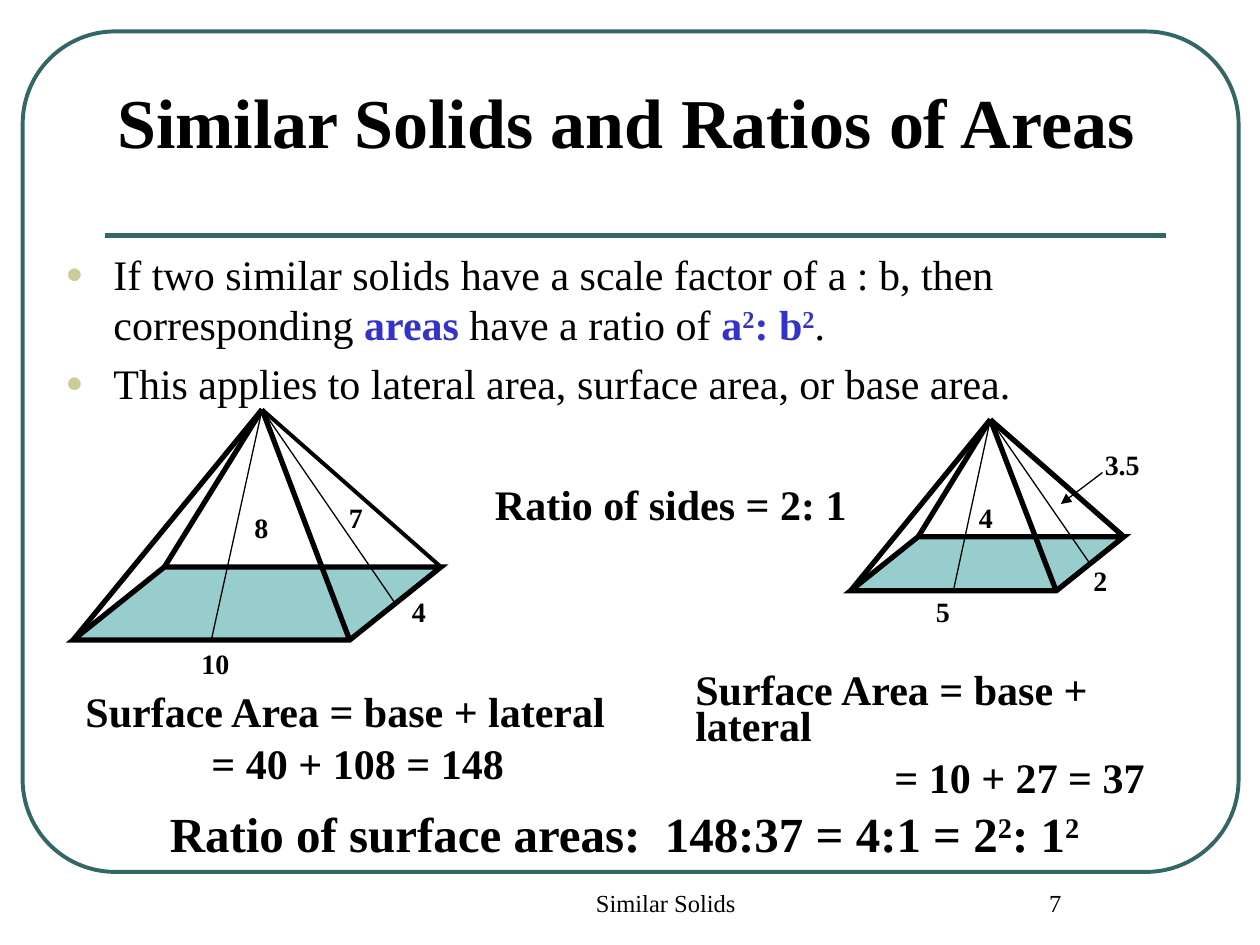
from dataclasses import dataclass

from lxml import etree
from pptx import Presentation
from pptx.dml.color import RGBColor
from pptx.enum import shapes, text
from pptx.oxml import ns
from pptx.util import Inches, Pt


@dataclass(frozen=True)
class Theme:
    font: str = "Times New Roman"
    ink: str = "000000"
    frame: str = "336666"
    accent: str = "3333CC"
    bullet: str = "CCCC99"
    base: str = "97CDCC"
    title: int = 40
    conclusion: int = 28
    body: int = 24
    label: int = 16
    footer: int = 14
    heavy: float = 3
    medium: float = 2.25
    thin: float = 0.75


THEME = Theme()


def rgb(color):
    return RGBColor.from_string(color)


def add_child(parent, tag, **attributes):
    return etree.SubElement(parent, ns.qn(f"a:{tag}"), attributes)


def style(paragraph, size, bold=False):
    font = paragraph.font
    font.name, font.size, font.bold = THEME.font, Pt(size), bold
    font.color.rgb = rgb(THEME.ink)
    paragraph.space_before = Pt(0)


def place(shape, box):
    shape.left, shape.top, shape.width, shape.height = map(Inches, box)


def add_runs(paragraph, parts):
    for wording, superscript, color in parts:
        run = paragraph.add_run()
        run.text = wording
        if color:
            run.font.bold = True
            run.font.color.rgb = rgb(color)
        if superscript:
            run.font._element.set("baseline", "30000")


def add_text(slide, box, lines, size, bold=True, align=text.PP_ALIGN.LEFT):
    textbox = slide.shapes.add_textbox(*map(Inches, box))
    frame = textbox.text_frame
    frame.word_wrap = True
    for index, line in enumerate(lines):
        paragraph = frame.paragraphs[0] if index == 0 else frame.add_paragraph()
        style(paragraph, size, bold)
        paragraph.alignment = align
        add_runs(paragraph, [(line, False, None)] if isinstance(line, str) else line)
    return frame.paragraphs


def add_line(slide, start, end, width, color=THEME.ink, arrow=False):
    line = slide.shapes.add_connector(
        shapes.MSO_CONNECTOR.STRAIGHT, *map(Inches, (*start, *end)))
    line.line.color.rgb = rgb(color)
    line.line.width = Pt(width)
    if arrow:
        add_child(line.line._get_or_add_ln(), "tailEnd", type="triangle")
    add_child(line._element.spPr, "effectLst")


def add_frame(slide, box):
    border = slide.shapes.add_shape(
        shapes.MSO_SHAPE.ROUNDED_RECTANGLE, *map(Inches, box))
    border.adjustments[0] = 0.11
    border.shadow.inherit = False
    border.fill.background()
    border.line.color.rgb = rgb(THEME.frame)
    border.line.width = Pt(THEME.medium)
    left, top, width, _ = box
    rule_y = top + 1.62
    add_line(slide, (left + 0.65, rule_y), (left + width - 0.58, rule_y),
             THEME.heavy, THEME.frame)


def fill_title(slide, box):
    title = slide.shapes.title
    place(title, box)
    frame = title.text_frame
    frame.text = "Similar Solids and Ratios of Areas"
    frame.auto_size = text.MSO_AUTO_SIZE.NONE
    frame.vertical_anchor = text.MSO_ANCHOR.BOTTOM
    style(frame.paragraphs[0], THEME.title, True)
    frame.paragraphs[0].alignment = text.PP_ALIGN.LEFT


def fill_rules(slide, box):
    body = slide.placeholders[1]
    place(body, box)
    frame = body.text_frame
    frame.auto_size = text.MSO_AUTO_SIZE.NONE
    accent = THEME.accent
    rules = [
        [("If two similar solids have a scale factor of a : b, then corresponding ",
          False, None),
         ("areas", False, accent), (" have a ratio of ", False, None),
         ("a", False, accent), ("2", True, accent), (": b", False, accent),
         ("2", True, accent), (".", False, None)],
        [("This applies to lateral area, surface area, or base area.", False, None)],
    ]
    for index, parts in enumerate(rules):
        paragraph = frame.paragraphs[0] if index == 0 else frame.add_paragraph()
        style(paragraph, THEME.body)
        paragraph.space_before = Pt(4.8 * index)
        add_runs(paragraph, parts)
        properties = paragraph._p.get_or_add_pPr()
        properties.set("marL", str(Inches(0.38)))
        properties.set("indent", str(Inches(-0.38)))
        add_child(add_child(properties, "buClr"), "srgbClr", val=THEME.bullet)
        add_child(properties, "buSzPct", val="70000")
        add_child(properties, "buChar", char="●")


def add_pyramid(slide, box, apex_dx, base_height, right_edge, labels):
    left, top, width, height = box
    right, bottom = left + width, top + height
    back_y = bottom - base_height
    skew = 1.25 * base_height
    base = slide.shapes.add_shape(
        shapes.MSO_SHAPE.PARALLELOGRAM,
        *map(Inches, (left, back_y, width, base_height)))
    base.adjustments[0] = 1.25
    base.shadow.inherit = False
    base.fill.solid()
    base.fill.fore_color.rgb = rgb(THEME.base)
    base.line.color.rgb = rgb(THEME.ink)
    base.line.width = Pt(THEME.heavy)
    add_child(base.line._get_or_add_ln(), "miter", lim="800000")

    apex = (left + apex_dx, top)
    front_right = right - skew
    edges = [
        ((left, bottom), THEME.heavy),
        ((left + skew, back_y), THEME.heavy),
        ((front_right, bottom), THEME.heavy),
        ((right, back_y), right_edge),
        (((left + front_right) / 2, bottom), THEME.thin),
        (((right + front_right) / 2, bottom - base_height / 2), THEME.thin),
    ]
    for end, weight in edges:
        add_line(slide, apex, end, weight)
    for wording, dx, dy, label_width in labels:
        add_text(slide, (left + dx, top + dy, label_width, 0.37),
                 [wording], THEME.label)


def add_surface_area(slide, box, calculation, indent):
    paragraphs = add_text(
        slide, box, ["Surface Area = base + lateral", calculation], THEME.body)
    for paragraph in paragraphs:
        paragraph.line_spacing = 0.7
    paragraphs[1].space_before = Pt(9.6)
    paragraphs[1]._p.get_or_add_pPr().set("marL", str(Inches(indent)))


def add_footer(slide, box):
    left, top, _, height = box
    for wording, dx, width in (("Similar Solids", 0.03, 3.17), ("7", 3.83, 1.75)):
        add_text(slide, (left + dx, top, width, height), [wording],
                 THEME.footer, False, text.PP_ALIGN.CENTER)


def main():
    deck = Presentation()
    deck.slide_width, deck.slide_height = Inches(10), Inches(7.5)
    slide = deck.slides.add_slide(deck.slide_layouts[1])
    add_frame(slide, (0.18, 0.25, 9.65, 6.67))
    fill_title(slide, (0.83, 0.58, 8.42, 0.76))
    fill_rules(slide, (0.42, 1.92, 9.25, 4.5))
    add_pyramid(slide, (0.58, 3.25, 2.92, 1.83), 1.5, 0.58, THEME.medium,
                [("10", 0.92, 1.83, 0.75), ("4", 2.59, 1.42, 0.42),
                 ("8", 1.34, 0.75, 0.42), ("7", 2.09, 0.67, 0.5)])
    add_pyramid(slide, (6.75, 3.33, 2.17, 1.36), 1.11, 0.43, THEME.heavy,
                [("5", 0.58, 1.34, 0.5), ("2", 1.83, 1.09, 0.33),
                 ("4", 0.92, 0.59, 0.58), ("3.5", 1.92, 0.17, 0.67)])
    add_line(slide, (8.75, 3.75), (8.42, 4), THEME.thin, arrow=True)
    add_text(slide, (3.83, 3.75, 3, 0.5), ["Ratio of sides = 2: 1"], THEME.body)
    add_surface_area(slide, (0.58, 5.5, 4.42, 0.82), "= 40 + 108 = 148", 1)
    add_surface_area(slide, (5.42, 5.33, 4.25, 0.82), "= 10 + 27 = 37", 1.58)
    add_text(slide, (1.25, 6.33, 7.67, 0.57),
             [[("Ratio of surface areas:  148:37 = 4:1 = 2", False, None),
               ("2", True, None), (": 1", False, None), ("2", True, None)]],
             THEME.conclusion)
    add_footer(slide, (3.67, 7, 5.58, 0.5))
    deck.save("out.pptx")


if __name__ == "__main__":
    main()
